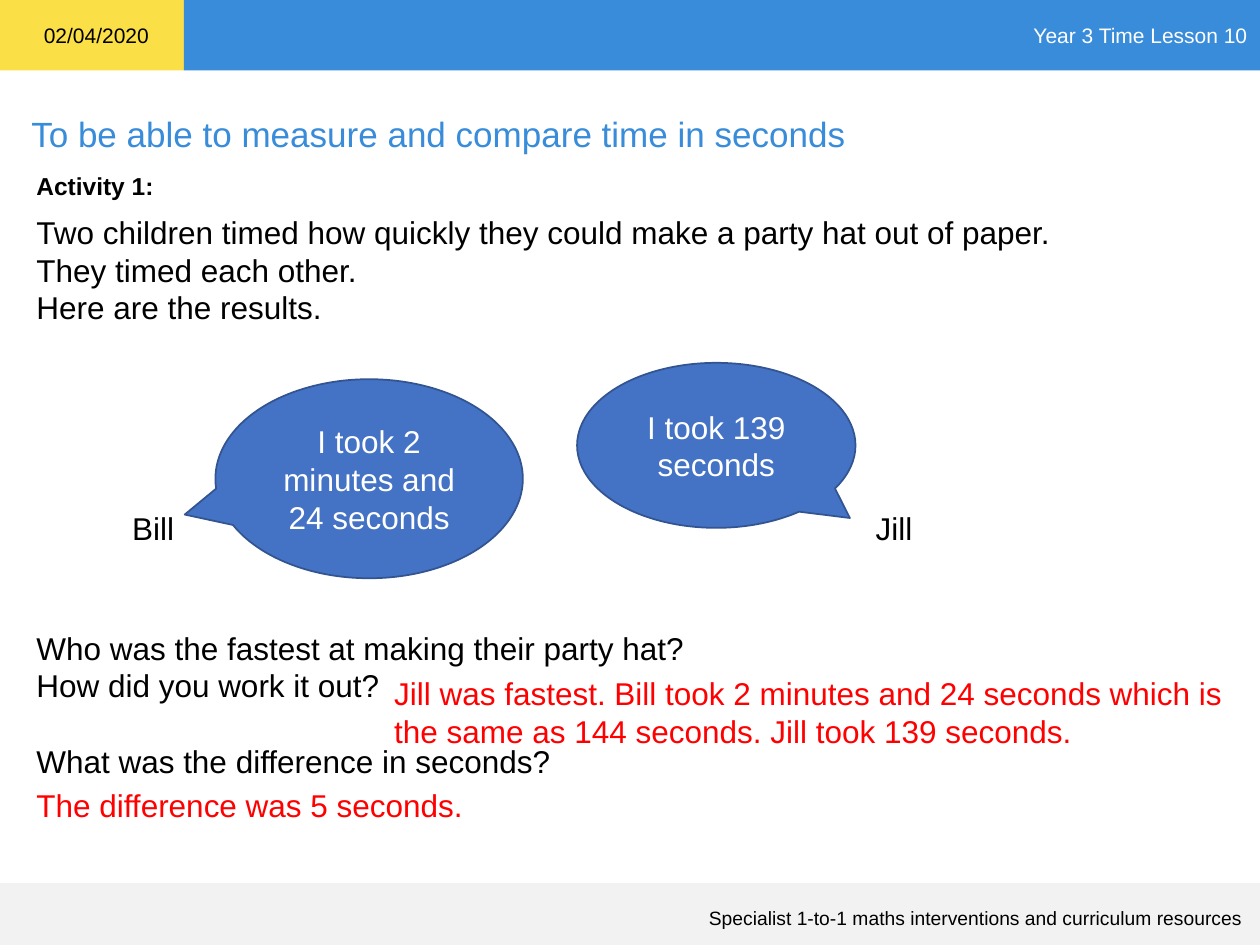
from pptx import Presentation
from pptx.dml.color import RGBColor
from pptx.enum.shapes import MSO_SHAPE
from pptx.enum.text import MSO_ANCHOR, PP_ALIGN
from pptx.util import Inches, Pt

BLACK = RGBColor(0x00, 0x00, 0x00)
WHITE = RGBColor(0xFF, 0xFF, 0xFF)
RED = RGBColor(0xFF, 0x00, 0x00)
SKY = RGBColor(0x38, 0x8C, 0xDA)
YELLOW = RGBColor(0xFA, 0xDF, 0x47)
GREY = RGBColor(0xF2, 0xF2, 0xF2)
BLUE = RGBColor(0x44, 0x72, 0xC4)
NAVY = RGBColor(0x32, 0x54, 0x91)

LEFT, MID, RIGHT = PP_ALIGN.LEFT, PP_ALIGN.CENTER, PP_ALIGN.RIGHT


class Page:
    """Holds the text style and the current slide."""

    font = "Arial"
    size = 18

    def __init__(self, slide):
        self.slide = slide

    def label(self, shape, lines, size=None, color=BLACK, align=LEFT, bold=False):
        frame = shape.text_frame
        for i, line in enumerate(lines):
            para = frame.paragraphs[0] if i == 0 else frame.add_paragraph()
            para.alignment = align
            run = para.add_run()
            run.text = line
            run.font.name = self.font
            run.font.size = Pt(size or self.size)
            run.font.bold = bold
            run.font.color.rgb = color
        return frame

    def text(self, x, y, w, h, *lines, wrap=True, **style):
        box = self.slide.shapes.add_textbox(*map(Inches, (x, y, w, h)))
        box.text_frame.word_wrap = wrap
        return self.label(box, lines, **style)

    def shape(self, kind, x, y, w, h, fill, line=None):
        item = self.slide.shapes.add_shape(kind, *map(Inches, (x, y, w, h)))
        item.shadow.inherit = False
        item.fill.solid()
        item.fill.fore_color.rgb = fill
        if line is None:
            item.line.fill.background()
        else:
            item.line.color.rgb = line
            item.line.width = Pt(1)
        item.text_frame.vertical_anchor = MSO_ANCHOR.MIDDLE
        return item

    def band(self, x, y, w, h, fill):
        return self.shape(MSO_SHAPE.RECTANGLE, x, y, w, h, fill)

    def bubble(self, x, y, w, h, tip, words):
        item = self.shape(MSO_SHAPE.OVAL_CALLOUT, x, y, w, h, BLUE, NAVY)
        item.adjustments[0], item.adjustments[1] = tip
        self.label(item, [words], color=WHITE, align=MID)


def main():
    deck = Presentation()
    deck.slide_width, deck.slide_height = Inches(10), Inches(7.5)
    page = Page(deck.slides.add_slide(deck.slide_layouts[6]))

    # Header and footer
    page.band(0, 0, 1.46, 0.56, YELLOW)
    head = page.band(1.46, 0, 8.54, 0.56, SKY)
    page.label(head, ["Year 3 Time Lesson 10"], size=12, color=WHITE, align=RIGHT)
    page.text(0.25, 0.13, 1.04, 0.3, "02/04/2020", size=12, wrap=False)
    page.band(0, 7.01, 10, 0.49, GREY)
    page.text(0.42, 7.14, 9.54, 0.28,
              "Specialist 1-to-1 maths interventions and curriculum resources",
              size=11, align=RIGHT)

    # Title and task
    page.text(0.15, 0.84, 9.71, 0.44,
              "To be able to measure and compare time in seconds",
              size=20, color=SKY)
    page.text(0.19, 1.31, 1.14, 0.34, "Activity 1:", size=14, bold=True, wrap=False)
    page.text(0.19, 1.64, 9.61, 1.01,
              "Two children timed how quickly they could make a party hat out of paper.",
              "They timed each other.",
              "Here are the results.")

    # Children and their times
    page.bubble(1.71, 3.01, 2.44, 1.58, (-0.6, 0.18), "I took 2 minutes and 24 seconds")
    page.bubble(4.58, 2.88, 2.21, 1.31, (0.48, 0.44), "I took 139 seconds")
    for x, name in ((0.91, "Bill"), (6.79, "Jill")):
        page.text(x, 3.99, 0.61, 0.4, name, align=MID)

    # Questions, with a one-line gap before the last
    asks = page.text(0.19, 4.94, 5.5, 1.31,
                     "Who was the fastest at making their party hat?",
                     "How did you work it out?",
                     "What was the difference in seconds?")
    asks.paragraphs[-1].space_before = Pt(21.6)

    # Answers
    page.text(3.03, 5.3, 6.84, 0.71,
              "Jill was fastest. Bill took 2 minutes and 24 seconds which is "
              "the same as 144 seconds. Jill took 139 seconds.", color=RED)
    page.text(0.19, 6.19, 3.62, 0.4, "The difference was 5 seconds.",
              color=RED, wrap=False)

    deck.save("out.pptx")


if __name__ == "__main__":
    main()
